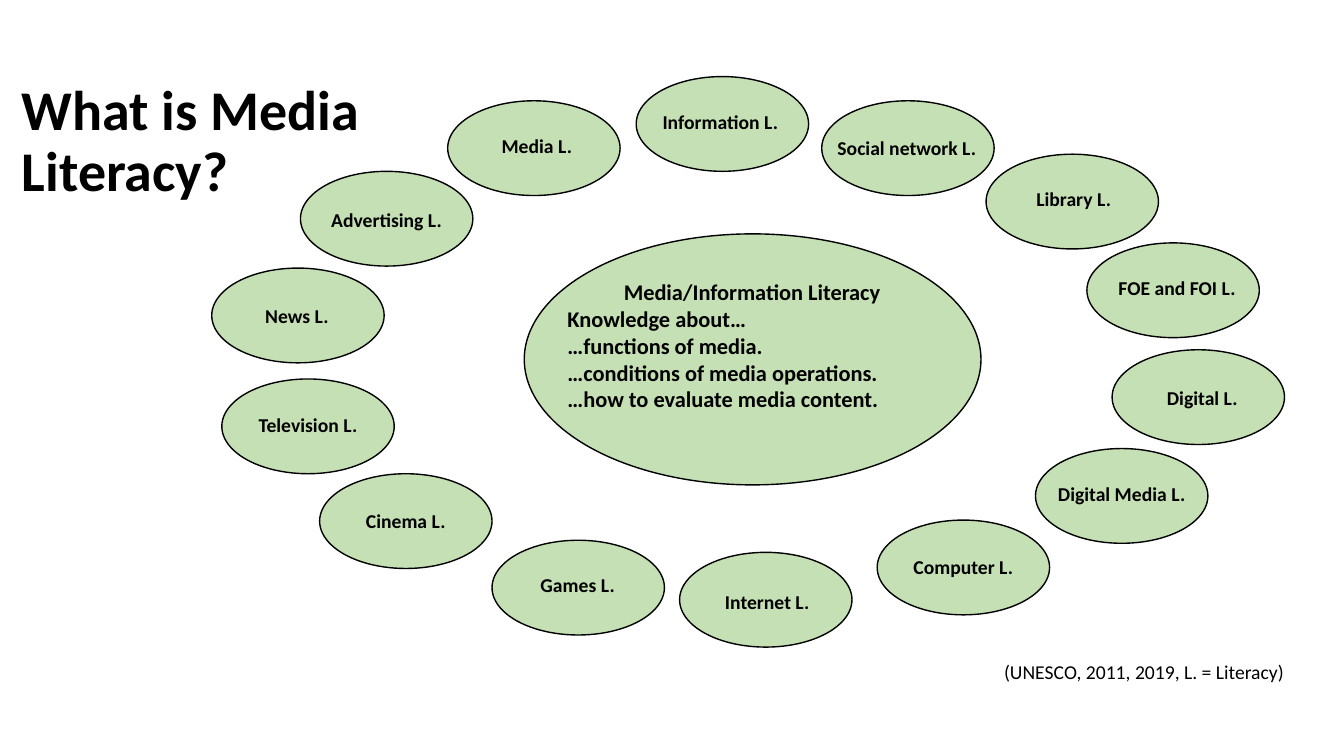
from pptx import Presentation
from pptx.dml.color import RGBColor
from pptx.enum.shapes import MSO_SHAPE
from pptx.enum.text import MSO_ANCHOR, PP_ALIGN
from pptx.util import Inches, Pt

OVAL = MSO_SHAPE.OVAL
TOP, MIDDLE = MSO_ANCHOR.TOP, MSO_ANCHOR.MIDDLE
LEFT, CENTER, JUSTIFY = PP_ALIGN.LEFT, PP_ALIGN.CENTER, PP_ALIGN.JUSTIFY
GREEN, BLACK = "C5E0B4", "000000"

deck = Presentation()
deck.slide_width, deck.slide_height = Inches(13.33), Inches(7.5)
slide = deck.slides.add_slide(deck.slide_layouts[6])


def add_oval(x, y, w, h):
    oval = slide.shapes.add_shape(OVAL, Inches(x), Inches(y), Inches(w), Inches(h))
    oval.shadow.inherit = False
    oval.fill.solid()
    oval.fill.fore_color.rgb = RGBColor.from_string(GREEN)
    oval.line.color.rgb = RGBColor.from_string(BLACK)
    oval.line.width = Pt(1)


def add_text(text, x, y, w, h, size, bold=True, align=LEFT, anchor=TOP, wrap=True):
    box = slide.shapes.add_textbox(Inches(x), Inches(y), Inches(w), Inches(h))
    frame = box.text_frame
    frame.word_wrap = wrap
    frame.vertical_anchor = anchor
    frame.text = text
    for para in frame.paragraphs:
        para.alignment = align
        for run in para.runs:
            run.font.name = "Calibri"
            run.font.size = Pt(size)
            run.font.bold = bold
            run.font.color.rgb = RGBColor.from_string(BLACK)
    return frame


# name, oval left and top, label left, top and width
topics = [
    ("Information L.", 6.31, 0.76, 6.19, 1.04, 1.91),
    ("Social network L.", 8.15, 1, 8.04, 1.29, 1.91),
    ("Library L.", 9.78, 1.53, 10.18, 1.8, 0.94),
    ("FOE and FOI L.", 10.78, 2.41, 10.99, 2.68, 1.37),
    ("Digital L.", 11.03, 3.47, 11.47, 3.78, 0.91),
    ("Digital Media L.", 10.27, 4.45, 10.39, 4.73, 1.47),
    ("Computer L.", 8.7, 5.16, 8.96, 5.45, 1.19),
    ("Internet L.", 6.74, 5.48, 7.09, 5.8, 1.04),
    ("Games L.", 4.88, 5.36, 5.26, 5.63, 0.94),
    ("Cinema L.", 3.17, 4.7, 3.53, 5, 0.99),
    ("Television L.", 2.2, 3.76, 2.46, 4.04, 1.19),
    ("News L.", 2.1, 2.66, 2.14, 2.96, 1.61),
    ("Advertising L.", 2.98, 1.7, 2.88, 2.01, 1.91),
    ("Media L.", 4.44, 1, 4.37, 1.28, 1.91),
]
for name, x, y, left, top, width in topics:
    add_oval(x, y, 1.71, 0.94)
    add_text(name, left, top, width, 0.34, 14, align=CENTER, anchor=MIDDLE, wrap=False)

add_oval(5.2, 2.32, 4.53, 2.49)
core = add_text(
    "Media/Information Literacy\n"
    "Knowledge about…\n"
    "…functions of media.\n"
    "…conditions of media operations.\n"
    "…how to evaluate media content.",
    5.53, 2.71, 3.86, 1.45, 16, align=JUSTIFY)
core.paragraphs[0].alignment = CENTER

add_text("(UNESCO, 2011, 2019, L. = Literacy)", 9.86, 6.5, 3.82, 0.4, 14, bold=False)
title = add_text("What is Media Literacy?", 0.12, 0.76, 3.56, 1.31, 40, anchor=MIDDLE)
title.paragraphs[0].line_spacing = 0.9

deck.save("out.pptx")
